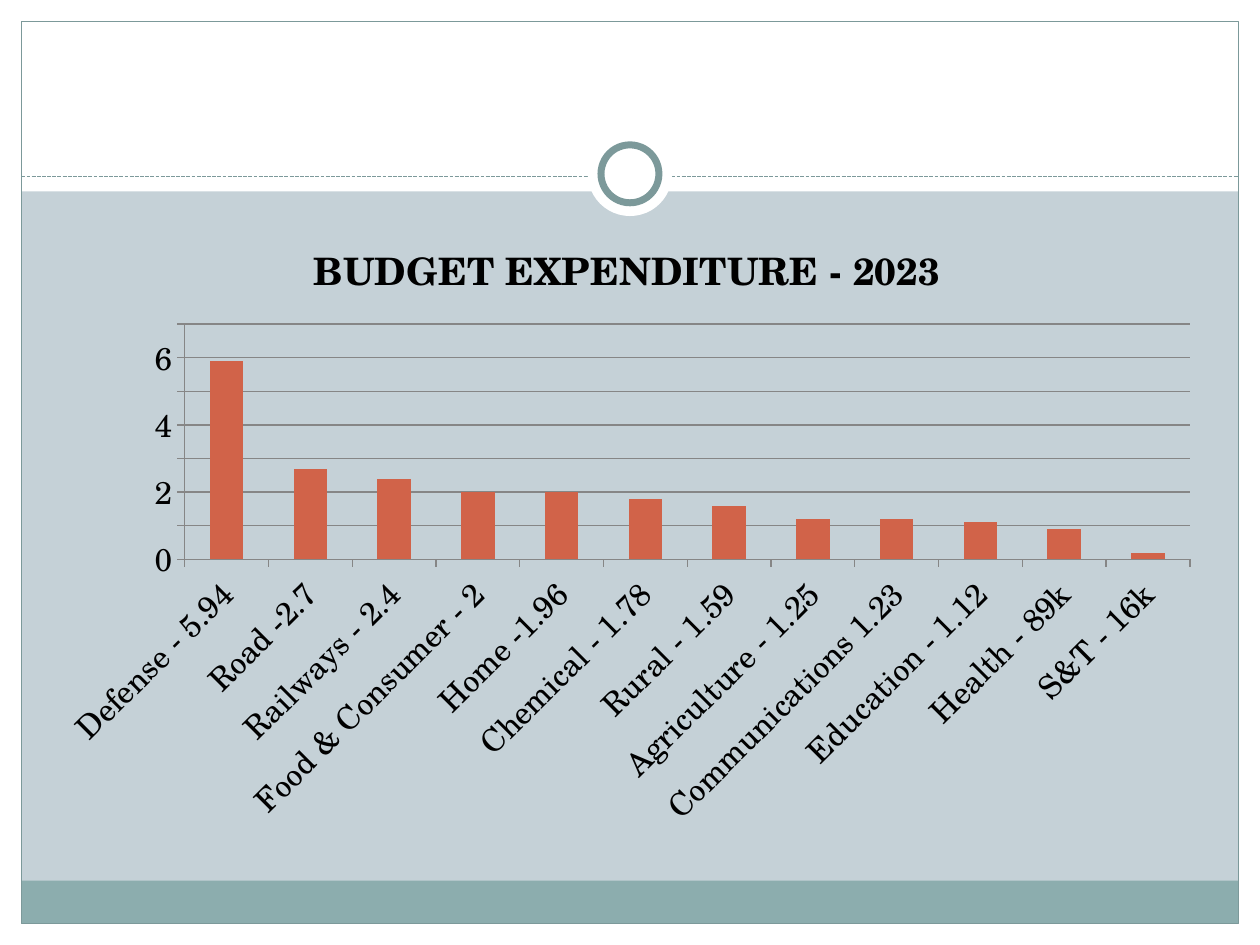
import pptx
import pptx.chart.data
import pptx.dml.color
import pptx.enum.chart
import pptx.enum.dml
import pptx.enum.shapes
import pptx.oxml
import pptx.oxml.ns
import pptx.util

RGBColor = pptx.dml.color.RGBColor
WHITE = RGBColor(0xFF, 0xFF, 0xFF)
BLACK = RGBColor(0, 0, 0)
MIST = RGBColor(0xC5, 0xD1, 0xD7)
TEAL = RGBColor(0x8C, 0xAD, 0xAE)
SLATE = RGBColor(0x7C, 0x99, 0x9A)
BRICK = RGBColor(0xD1, 0x63, 0x49)
GRAY = RGBColor(0x86, 0x86, 0x86)
FONT = "TeX Gyre Schola"

WIDTH, HEIGHT = 10, 7.5
MARGIN = 0.17
HEADER = 1.52
FOOTER = 0.34
RULE_Y = 1.4
RING_Y = 1.38

BUDGET = [
    ("Defense - 5.94", 5.9),
    ("Road -2.7", 2.7),
    ("Railways - 2.4", 2.4),
    ("Food & Consumer - 2", 2),
    ("Home -1.96", 2),
    ("Chemical - 1.78", 1.8),
    ("Rural - 1.59", 1.6),
    ("Agriculture - 1.25", 1.2),
    ("Communications 1.23", 1.2),
    ("Education - 1.12", 1.1),
    ("Health - 89k", 0.9),
    ("S&T - 16k", 0.2),
]


def inches(*lengths):
    return [pptx.util.Inches(n) for n in lengths]


def style_line(line, color, width=0.75):
    line.color.rgb = color
    line.width = pptx.util.Pt(width)


def style_font(font, size=18, bold=False, color=BLACK):
    font.name = FONT
    font.size = pptx.util.Pt(size)
    font.bold = bold
    font.color.rgb = color


def add_text(tf, text, **style):
    r = tf.paragraphs[0].add_run()
    r.text = text
    style_font(r.font, **style)


def add_plain(s, kind, box, fill=None, line=None, width=0.75):
    sp = s.shapes.add_shape(kind, *inches(*box))
    sp.shadow.inherit = False
    if fill is None:
        sp.fill.background()
    else:
        sp.fill.solid()
        sp.fill.fore_color.rgb = fill
    if line is None:
        sp.line.fill.background()
    else:
        style_line(sp.line, line, width)


def add_dashed_rule(s, y):
    ends = inches(MARGIN, y, WIDTH - MARGIN, y)
    rule = s.shapes.add_connector(pptx.enum.shapes.MSO_CONNECTOR.STRAIGHT, *ends)
    style_line(rule.line, SLATE)
    rule.line.dash_style = pptx.enum.dml.MSO_LINE.SQUARE_DOT
    sp_pr = rule._element.spPr
    sp_pr.append(pptx.oxml.parse_xml(
        f"<a:effectLst {pptx.oxml.ns.nsdecls('a')}/>"))


def add_circle(s, diameter, **style):
    """Circle centred on the slide's width, at the height of the ring."""
    box = ((WIDTH - diameter) / 2, RING_Y - diameter / 2, diameter, diameter)
    add_plain(s, pptx.enum.shapes.MSO_SHAPE.OVAL, box, WHITE, **style)


def add_frame(s):
    rect = pptx.enum.shapes.MSO_SHAPE.RECTANGLE
    inner_width = WIDTH - 2 * MARGIN
    bottom = HEIGHT - MARGIN
    for box in [
        (0, bottom, WIDTH, MARGIN),
        (0, 0, WIDTH, HEADER),
        (0, 0, MARGIN, HEIGHT),
        (WIDTH - MARGIN, 0, MARGIN, HEIGHT),
    ]:
        add_plain(s, rect, box, WHITE)
    add_plain(s, rect, (MARGIN, bottom - FOOTER, inner_width, FOOTER), TEAL)
    add_plain(s, rect, (MARGIN, MARGIN, inner_width, bottom - MARGIN), line=SLATE)
    add_dashed_rule(s, RULE_Y)
    add_circle(s, 0.67)
    add_circle(s, 0.46, line=SLATE, width=4)


def style_axis(axis):
    axis.major_tick_mark = pptx.enum.chart.XL_TICK_MARK.OUTSIDE
    axis.minor_tick_mark = pptx.enum.chart.XL_TICK_MARK.NONE
    style_line(axis.format.line, GRAY)
    style_font(axis.tick_labels.font)


def add_budget_chart(s):
    data = pptx.chart.data.CategoryChartData()
    data.categories = [name for name, _ in BUDGET]
    data.add_series("Series 1", [value for _, value in BUDGET])
    kind = pptx.enum.chart.XL_CHART_TYPE.COLUMN_CLUSTERED
    chart = s.shapes.add_chart(kind, *inches(0.33, 1.67, 9.3, 5), data).chart
    style_font(chart.font)
    chart.has_legend = False
    chart.has_title = True
    add_text(chart.chart_title.text_frame, "BUDGET EXPENDITURE - 2023",
             size=21.6, bold=True)
    chart.chart_title.include_in_layout = False

    plot = chart.plots[0]
    plot.gap_width = 150
    plot.vary_by_categories = False
    fill = plot.series[0].format.fill
    fill.solid()
    fill.fore_color.rgb = BRICK

    for axis in (chart.category_axis, chart.value_axis):
        style_axis(axis)
    labels = chart.category_axis._element.find(pptx.oxml.ns.qn("c:txPr"))
    labels.find(pptx.oxml.ns.qn("a:bodyPr")).set("rot", str(-45 * 60000))
    values = chart.value_axis
    values.minimum_scale, values.maximum_scale, values.major_unit = 0, 7, 1
    values.has_major_gridlines = True
    style_line(values.major_gridlines.format.line, GRAY)


def main():
    prs = pptx.Presentation()
    prs.slide_width, prs.slide_height = inches(WIDTH, HEIGHT)
    s = prs.slides.add_slide(prs.slide_layouts[6])
    s.background.fill.solid()
    s.background.fill.fore_color.rgb = MIST
    add_frame(s)
    add_budget_chart(s)
    prs.save("out.pptx")


if __name__ == "__main__":
    main()
